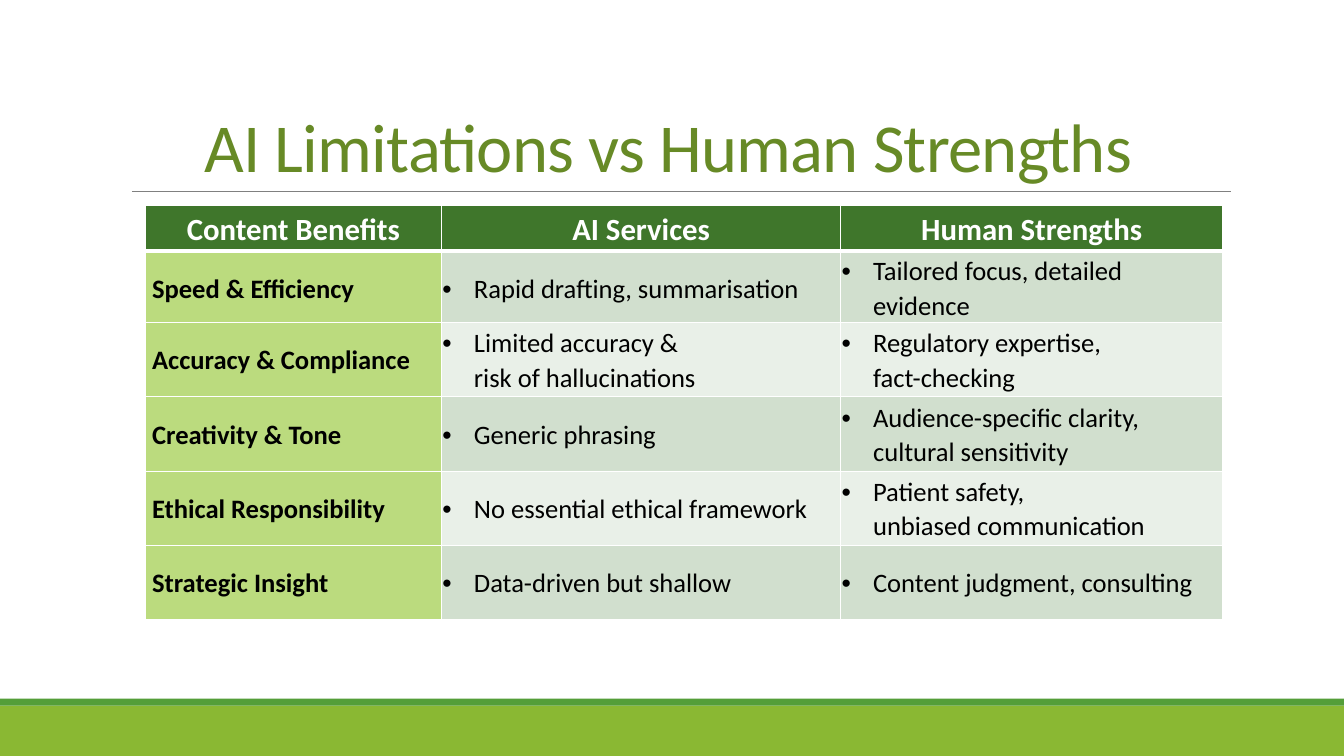
from lxml import etree
from pptx import Presentation
from pptx.dml.color import RGBColor
from pptx.enum.shapes import MSO_CONNECTOR, MSO_SHAPE
from pptx.enum.text import MSO_ANCHOR, PP_ALIGN
from pptx.oxml.ns import qn
from pptx.util import Pt

TITLE = "AI Limitations vs Human Strengths "
HEAD = ("Content Benefits", "AI Services", "Human Strengths")
ROWS = [
    ("Speed & Efficiency", "Rapid drafting, summarisation",
     "Tailored focus, detailed evidence"),
    ("Accuracy & Compliance", "Limited accuracy &\nrisk of hallucinations",
     "Regulatory expertise,\nfact-checking"),
    ("Creativity & Tone", "Generic phrasing",
     "Audience-specific clarity, \ncultural sensitivity"),
    ("Ethical Responsibility", "No essential ethical framework",
     "Patient safety, \nunbiased communication"),
    ("Strategic Insight", "Data-driven but shallow",
     "Content judgment, consulting"),
]

WHITE = RGBColor(0xFF, 0xFF, 0xFF)
BLACK = RGBColor(0, 0, 0)
GREY = RGBColor(0x80, 0x80, 0x80)
OLIVE = RGBColor(0x67, 0x8A, 0x26)
LIME = RGBColor(0x8A, 0xB8, 0x33)
GREEN = RGBColor(0x54, 0x9E, 0x39)
DARK = RGBColor(0x3F, 0x76, 0x2B)
LABEL = RGBColor(0xBB, 0xDB, 0x7E)
BANDS = (RGBColor(0xD1, 0xDF, 0xCE), RGBColor(0xE9, 0xF0, 0xE8))
RECT = MSO_SHAPE.RECTANGLE
LINE = MSO_CONNECTOR.STRAIGHT
MIDDLE, BOTTOM = MSO_ANCHOR.MIDDLE, MSO_ANCHOR.BOTTOM
LEFT, CENTER = PP_ALIGN.LEFT, PP_ALIGN.CENTER

WIDE, HIGH = 960, 540
COLS = (211.7, 285.1, 272.9)
EDGE, TOP = 103.7, 146.9
HEAD_H, ROW_H = 32.2, 53.1
NEXT = 230.4


def write(frame, text, size, color, bold=False, align=LEFT, lead=1.07,
          after=8, track=0, bullet=False):
    para = frame.paragraphs[0]
    para.text = text
    para.alignment = align
    para.line_spacing = lead
    para.space_after = Pt(after)
    for run in para.runs:
        font = run.font
        font.name, font.size, font.bold = "Calibri", Pt(size), bold
        font.color.rgb = color
        if track:
            run._r.get_or_add_rPr().set("spc", str(track))
    if bullet:
        props = para._p.get_or_add_pPr()
        props.set("marL", str(Pt(22.5)))
        props.set("indent", str(-Pt(22.5)))
        etree.SubElement(props, qn("a:buFont"), typeface="Arial")
        etree.SubElement(props, qn("a:buChar"), char="•")


def border(cell, base):
    props = cell._tc.get_or_add_tcPr()
    for side, width in (("L", 1), ("R", 1), ("T", 1), ("B", base)):
        line = etree.SubElement(props, qn("a:ln" + side), w=str(Pt(width)))
        fill = etree.SubElement(line, qn("a:solidFill"))
        etree.SubElement(fill, qn("a:srgbClr"), val=str(WHITE))


def style(cell, text, fill, base=1, pad=0.7, **form):
    cell.margin_left = Pt(pad)
    cell.margin_right = cell.margin_top = cell.margin_bottom = Pt(0.7)
    cell.vertical_anchor = MIDDLE
    border(cell, base)
    cell.fill.solid()
    cell.fill.fore_color.rgb = fill
    write(cell.text_frame, text, **form)


def grid(slide, top, heights):
    frame = slide.shapes.add_table(len(heights), len(COLS), Pt(EDGE), Pt(top),
                                   Pt(sum(COLS)), Pt(sum(heights)))
    table = frame.table
    table.horz_banding = False
    for col, width in zip(table.columns, COLS):
        col.width = Pt(width)
    for row, height in zip(table.rows, heights):
        row.height = Pt(height)
    return table


def bar(slide, top, height, color):
    shape = slide.shapes.add_shape(RECT, 0, Pt(top), Pt(WIDE), Pt(height))
    shape.shadow.inherit = False
    shape.fill.solid()
    shape.fill.fore_color.rgb = color
    shape.line.fill.background()


def main():
    deck = Presentation()
    deck.slide_width, deck.slide_height = Pt(WIDE), Pt(HIGH)
    slide = deck.slides.add_slide(deck.slide_layouts[6])

    bar(slide, 504, 36, LIME)
    bar(slide, 499, 5, GREEN)
    rule = slide.shapes.add_connector(LINE, Pt(94.3), Pt(136.8),
                                      Pt(879), Pt(136.8))
    rule.line.color.rgb = GREY
    rule.line.width = Pt(0.5)
    etree.SubElement(rule._element.spPr, qn("a:effectLst"))

    box = slide.shapes.add_textbox(Pt(86.4), Pt(22.3), Pt(792), Pt(114.5))
    box.text_frame.word_wrap = True
    box.text_frame.vertical_anchor = BOTTOM
    write(box.text_frame, TITLE, 49, OLIVE, align=CENTER, lead=0.85,
          after=0, track=-50)

    for i, texts in enumerate(ROWS):
        if i == 0:
            table = grid(slide, TOP, (HEAD_H, ROW_H))
            for j, text in enumerate(HEAD):
                style(table.cell(0, j), text, DARK, base=3, size=22,
                      color=WHITE, bold=True, align=CENTER)
        else:
            table = grid(slide, NEXT + (i - 1) * ROW_H, (ROW_H,))
        last = len(table.rows) - 1
        for j, text in enumerate(texts):
            first = j == 0
            style(table.cell(last, j), text, LABEL if first else BANDS[i % 2],
                  pad=5 if first else 0.7, size=19, color=BLACK, bold=first,
                  bullet=not first)

    deck.save("out.pptx")


if __name__ == "__main__":
    main()
